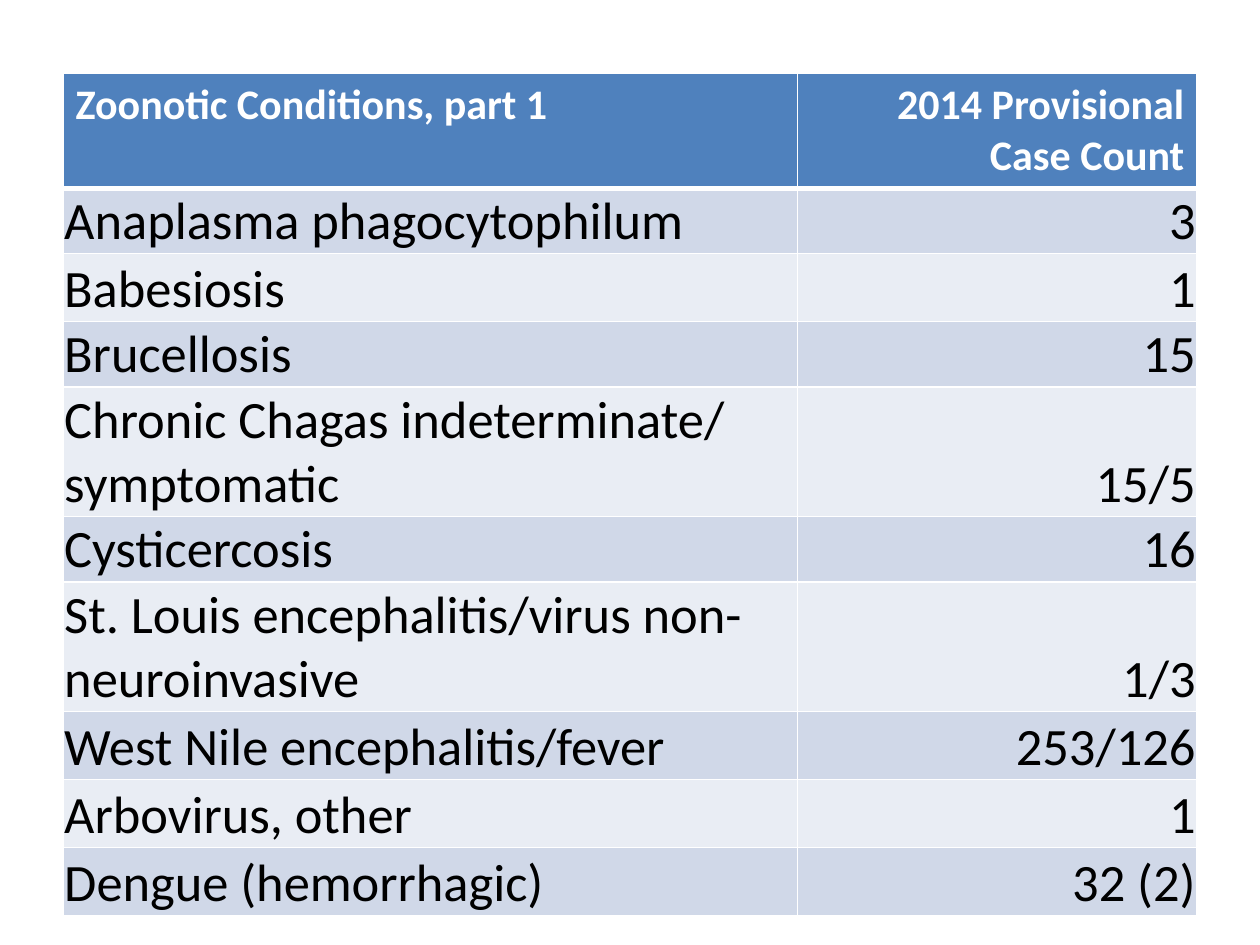
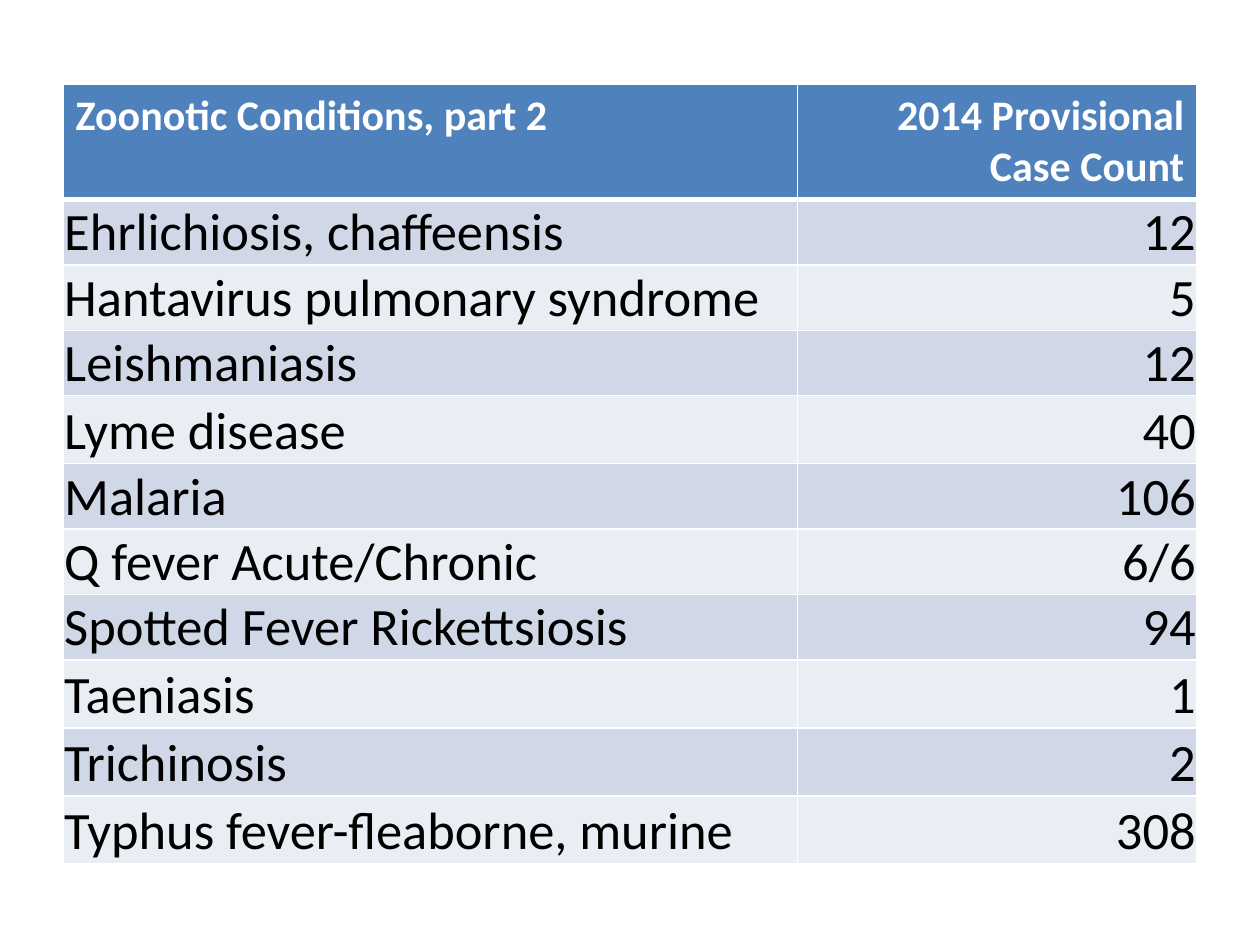
from dataclasses import dataclass

from lxml import etree
from pptx import Presentation
from pptx import util as u
from pptx.dml.color import RGBColor
from pptx.enum import text
from pptx.oxml.ns import qn


@dataclass(frozen=True)
class Theme:
    font: str = "Calibri"
    header_size: int = 24
    body_size: int = 30
    header_fill: str = "4F81BD"
    band_fills: tuple = ("D0D8E8", "E9EDF4")
    header_ink: str = "FFFFFF"
    body_ink: str = "000000"
    rule: str = "FFFFFF"
    thin: int = 1
    thick: int = 3


WIDTH, HEIGHT = 10, 7.5
TABLE_LEFT, TABLE_WIDTH = 0.05, 0.9
COLUMN_WIDTHS = 0.583, 0.317
HEADER_ROW, SHORT_ROW, TALL_ROW = 0.4 / HEIGHT, 0.5 / HEIGHT, 0.54 / HEIGHT
COUNT_TITLE = "2014 Provisional Case Count"

CASES_PART_1 = [
    ("Anaplasma phagocytophilum", "3"),
    ("Babesiosis", "1"),
    ("Brucellosis", "15"),
    ("Chronic Chagas indeterminate/ symptomatic", "15/5"),
    ("Cysticercosis", "16"),
    ("St. Louis encephalitis/virus non-neuroinvasive", "1/3"),
    ("West Nile encephalitis/fever", "253/126"),
    ("Arbovirus, other", "1"),
    ("Dengue (hemorrhagic)", "32 (2)"),
]
CASES_PART_2 = [
    ("Ehrlichiosis, chaffeensis", "12"),
    ("Hantavirus pulmonary syndrome", "5"),
    ("Leishmaniasis", "12"),
    ("Lyme disease", "40"),
    ("Malaria", "106"),
    ("Q fever Acute/Chronic", "6/6"),
    ("Spotted Fever Rickettsiosis", "94"),
    ("Taeniasis", "1"),
    ("Trichinosis", "2"),
    ("Typhus fever-fleaborne, murine", "308"),
]


def across(share):
    return u.Inches(round(share * WIDTH, 2))


def down(share):
    return u.Inches(round(share * HEIGHT, 2))


def write(frame, words, *, font, size, color, bold=False, align=text.PP_ALIGN.LEFT):
    para = frame.paragraphs[0]
    para.alignment = align
    span = para.add_run()
    span.text = words
    span.font.name = font
    span.font.size = u.Pt(size)
    span.font.bold = bold
    span.font.color.rgb = RGBColor.from_string(color)


def set_borders(cell, color, **widths):
    """Draw borders with widths in points, keyed L, R, T and B in that order."""
    properties = cell._tc.get_or_add_tcPr()
    for position, (side, width) in enumerate(widths.items()):
        line = etree.Element(qn(f"a:ln{side}"), w=str(u.Pt(width)))
        fill = etree.SubElement(line, qn("a:solidFill"))
        etree.SubElement(fill, qn("a:srgbClr"), val=color)
        properties.insert(position, line)


class CaseDeck:
    def __init__(self, theme):
        self.theme = theme
        self.deck = Presentation()
        self.deck.slide_width = u.Inches(WIDTH)
        self.deck.slide_height = u.Inches(HEIGHT)
        self.page = None

    def add_page(self):
        self.page = self.deck.slides.add_slide(self.deck.slide_layouts[6])

    def add_case_table(self, title, cases, top, height, tall_rows):
        """Place a two-column table; tall_rows holds the row numbers of taller rows."""
        rows = [(title, COUNT_TITLE), *cases]
        frame = self.page.shapes.add_table(
            len(rows), len(COLUMN_WIDTHS),
            across(TABLE_LEFT), down(top), across(TABLE_WIDTH), down(height))
        table = frame.table
        table.horz_banding = False
        for column, width in zip(table.columns, COLUMN_WIDTHS):
            column.width = across(width)
        for number, row in enumerate(rows):
            body_height = TALL_ROW if number in tall_rows else SHORT_ROW
            table.rows[number].height = down(body_height if number else HEADER_ROW)
            for column, words in enumerate(row):
                self.fill_cell(table.cell(number, column), words, number, column)
        frame.height = down(height)

    def fill_cell(self, cell, words, number, column):
        theme = self.theme
        is_header = number == 0
        fill = theme.header_fill if is_header else theme.band_fills[(number - 1) % 2]
        cell.fill.solid()
        cell.fill.fore_color.rgb = RGBColor.from_string(fill)
        if not is_header:
            cell.vertical_anchor = text.MSO_ANCHOR.BOTTOM
            cell.margin_left = cell.margin_right = cell.margin_top = u.Inches(0.01)
            cell.margin_bottom = 0
        set_borders(cell, theme.rule, L=theme.thin, R=theme.thin,
                    T=theme.thick if number == 1 else theme.thin,
                    B=theme.thick if is_header else theme.thin)
        write(cell.text_frame, words, font=theme.font, bold=is_header,
              size=theme.header_size if is_header else theme.body_size,
              color=theme.header_ink if is_header else theme.body_ink,
              align=text.PP_ALIGN.RIGHT if column else text.PP_ALIGN.LEFT)


def main():
    builder = CaseDeck(Theme())
    builder.add_page()
    builder.add_case_table("Zoonotic Conditions, part 1", CASES_PART_1,
                           top=0.58 / HEIGHT, height=6.61 / HEIGHT,
                           tall_rows={2, 6, 7, 8, 9})
    builder.add_page()
    builder.add_case_table("Zoonotic Conditions, part 2", CASES_PART_2,
                           top=0.67 / HEIGHT, height=6.12 / HEIGHT,
                           tall_rows={4, 8, 9, 10})
    builder.deck.save("out.pptx")


if __name__ == "__main__":
    main()
